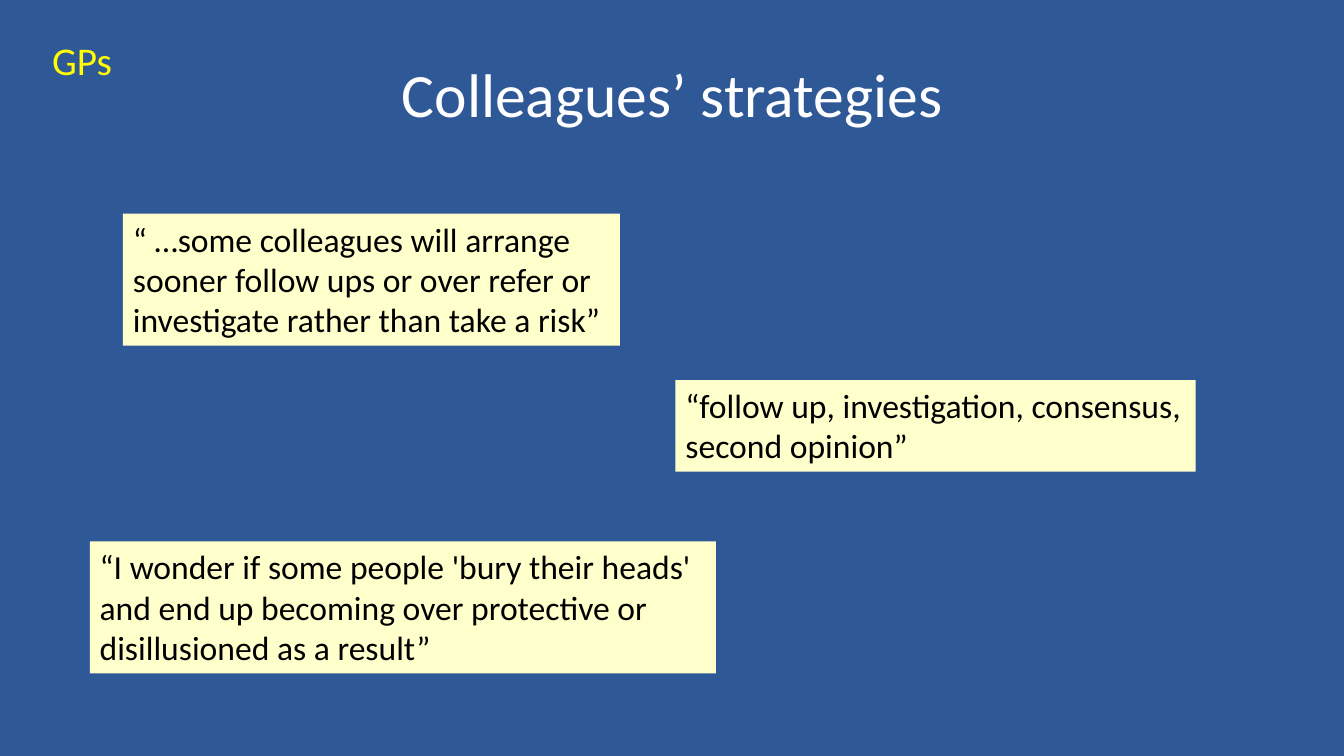
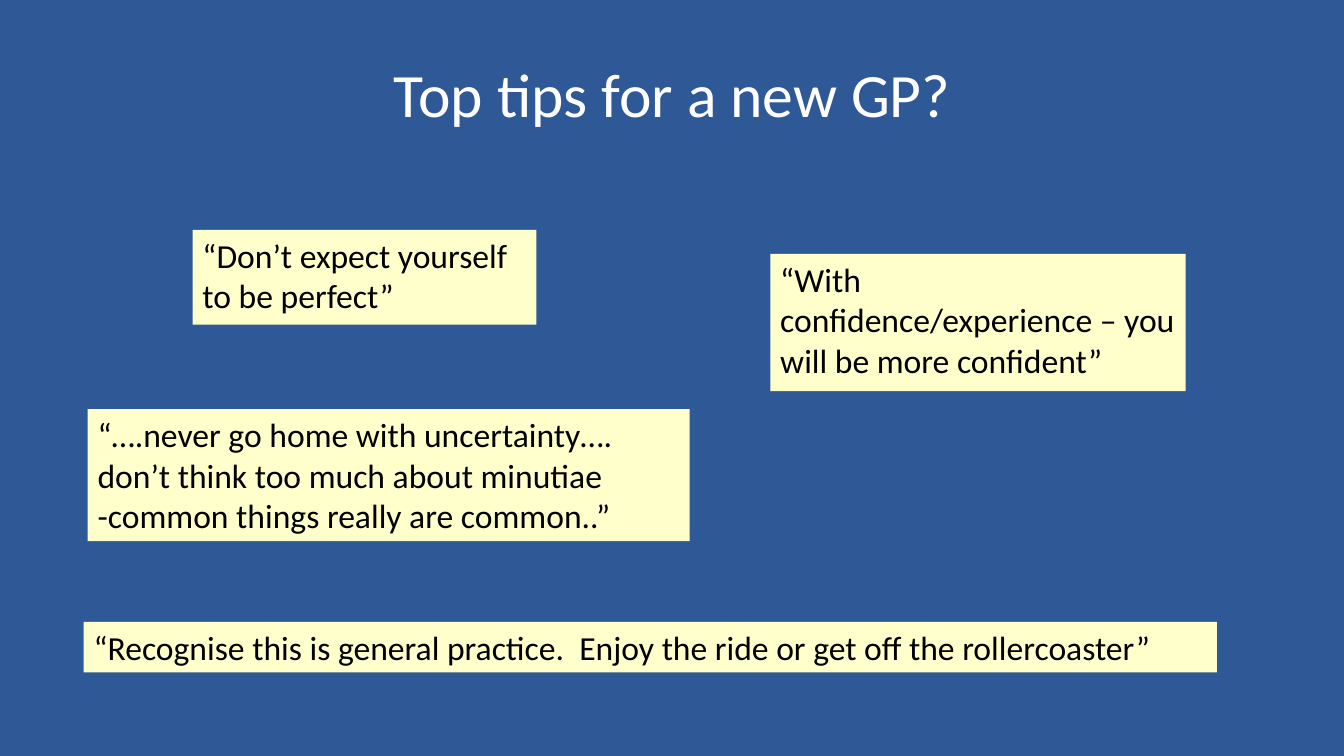
from pptx import Presentation
from pptx.dml.color import RGBColor
from pptx.enum.shapes import MSO_SHAPE as SHAPE
from pptx.enum.text import MSO_ANCHOR as ANCHOR, PP_ALIGN as ALIGN
from pptx.util import Inches, Pt

BLUE, CREAM, WHITE, YELLOW, BLACK = "2F5897", "FFFFCC", "FFFFFF", "FFFF00", "000000"
FONT = "Calibri"
TITLE_BOX = (0.67, 0.3, 12, 1.25)
TAG_BOX = (0.42, 0.31, 0.94, 0.57)

TITLE_STYLE = {"size": 44, "color": WHITE, "align": ALIGN.CENTER, "anchor": ANCHOR.MIDDLE}
TAG_STYLE = {"size": 28, "color": YELLOW}
QUOTE_STYLE = {"size": 24, "color": BLACK}

# Each quote: (left, top, width, height), text
SLIDES = [
    {
        "title": "Colleagues’ strategies",
        "tag": "GPs",
        "quotes": [
            ((1.22, 2.12, 4.93, 1.31),
             "“ …some colleagues will arrange sooner follow ups or over refer or "
             "investigate rather than take a risk”"),
            ((6.7, 3.77, 5.16, 0.91),
             "“follow up, investigation, consensus, second opinion”"),
            ((0.89, 5.37, 6.21, 1.31),
             "“I wonder if some people 'bury their heads' and end up becoming "
             "over protective or disillusioned as a result”"),
        ],
    },
    {
        "title": "Top tips for a new GP?",
        "quotes": [
            ((1.91, 2.28, 3.41, 0.94), "“Don’t expect yourself to be perfect”"),
            ((7.64, 2.52, 4.12, 1.36),
             "“With confidence/experience – you will be more confident”"),
            ((0.87, 4.06, 5.97, 1.31),
             "“….never go home with uncertainty…. don’t think too much about "
             "minutiae -common things really are common..”"),
            ((0.83, 6.17, 11.24, 0.5),
             "“Recognise this is general practice.  Enjoy the ride or get off "
             "the rollercoaster”"),
        ],
    },
]


def rgb(color):
    return RGBColor.from_string(color)


def write(sp, text, size, color, align=ALIGN.LEFT, anchor=ANCHOR.TOP):
    tf = sp.text_frame
    tf.word_wrap = True
    tf.vertical_anchor = anchor
    p = tf.paragraphs[0]
    p.alignment = align
    r = p.add_run()
    r.text = text
    for name, value in {"name": FONT, "size": Pt(size)}.items():
        setattr(r.font, name, value)
    r.font.color.rgb = rgb(color)


def add_label(slide, box, text, style):
    write(slide.shapes.add_textbox(*map(Inches, box)), text, **style)


def add_quote(slide, box, text):
    sp = slide.shapes.add_shape(SHAPE.RECTANGLE, *map(Inches, box))
    sp.shadow.inherit = False
    sp.fill.solid()
    sp.fill.fore_color.rgb = rgb(CREAM)
    sp.line.fill.background()
    write(sp, text, **QUOTE_STYLE)


def add_slide(prs, content):
    slide = prs.slides.add_slide(prs.slide_layouts[6])
    add_label(slide, TITLE_BOX, content["title"], TITLE_STYLE)
    for box, text in content["quotes"]:
        add_quote(slide, box, text)
    if "tag" in content:
        add_label(slide, TAG_BOX, content["tag"], TAG_STYLE)


def main():
    prs = Presentation()
    prs.slide_width, prs.slide_height = Inches(13.33), Inches(7.5)
    background = prs.slide_master.background.fill
    background.solid()
    background.fore_color.rgb = rgb(BLUE)
    for content in SLIDES:
        add_slide(prs, content)
    prs.save("out.pptx")


if __name__ == "__main__":
    main()
